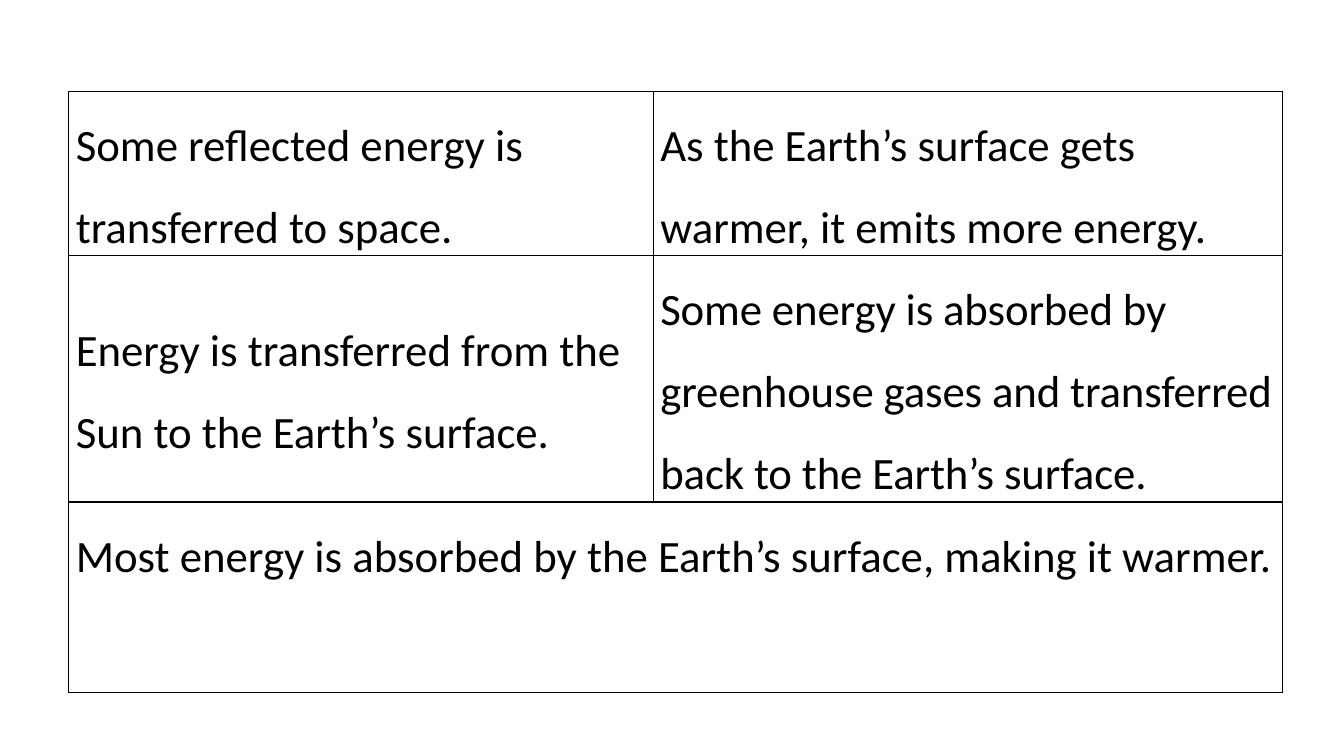
from lxml import etree
from pptx import Presentation
from pptx.dml.color import RGBColor
from pptx.enum.text import MSO_ANCHOR
from pptx.oxml.ns import qn
from pptx.util import Cm, Pt

MIDDLE = MSO_ANCHOR.MIDDLE
TOP = MSO_ANCHOR.TOP
COLOURS = {"ink": "000000"}
FONT = "Calibri"
COLUMN_WIDTHS = [14.73, 15.85]
ROW_HEIGHTS = [4.13, 6.2, 4.8]
STATEMENTS = [
    ["Some reflected energy is transferred to space.",
     "As the Earth’s surface gets warmer, it emits more energy."],
    ["Energy is transferred from the Sun to the Earth’s surface.",
     "Some energy is absorbed by greenhouse gases and transferred "
     "back to the Earth’s surface."],
    ["Most energy is absorbed by the Earth’s surface, making it warmer."],
]


def add_borders(cell):
    properties = cell._tc.get_or_add_tcPr()
    for side in ("lnL", "lnR", "lnT", "lnB"):
        line = etree.SubElement(properties, qn(f"a:{side}"), w=str(Pt(1)))
        fill = etree.SubElement(line, qn("a:solidFill"))
        etree.SubElement(fill, qn("a:srgbClr"), val=COLOURS["ink"])


def style_cell(cell):
    add_borders(cell)
    cell.fill.background()
    cell.margin_left = cell.margin_right = Cm(0.18)
    cell.margin_top = cell.margin_bottom = 0
    cell.vertical_anchor = MIDDLE


def write_statement(cell, text):
    cell.text_frame.text = text
    para = cell.text_frame.paragraphs[0]
    para.line_spacing = 1.5
    span = para.runs[0]
    span.font.name = FONT
    span.font.size = Pt(32)
    span.font.color.rgb = RGBColor.from_string(COLOURS["ink"])
    return span


def add_statement_table(page):
    frame = page.shapes.add_table(
        len(ROW_HEIGHTS), len(COLUMN_WIDTHS), Cm(1.73), Cm(2.3),
        Cm(sum(COLUMN_WIDTHS)), Cm(sum(ROW_HEIGHTS)))
    table = frame.table
    table.first_row = False
    table.horz_banding = False
    for column, width in zip(table.columns, COLUMN_WIDTHS):
        column.width = Cm(width)
    for row, height in zip(table.rows, ROW_HEIGHTS):
        row.height = Cm(height)
    for cell in table.iter_cells():
        style_cell(cell)
    table.cell(2, 0).merge(table.cell(2, 1))
    table.cell(2, 0).vertical_anchor = TOP
    for row, texts in enumerate(STATEMENTS):
        for column, text in enumerate(texts):
            span = write_statement(table.cell(row, column), text)
            if (row, column) == (1, 1):
                span.font._element.set("spc", "-10")


def main():
    deck = Presentation()
    deck.slide_width = Cm(33.87)
    deck.slide_height = Cm(19.05)
    page = deck.slides.add_slide(deck.slide_layouts[6])
    add_statement_table(page)
    deck.save("out.pptx")


if __name__ == "__main__":
    main()
